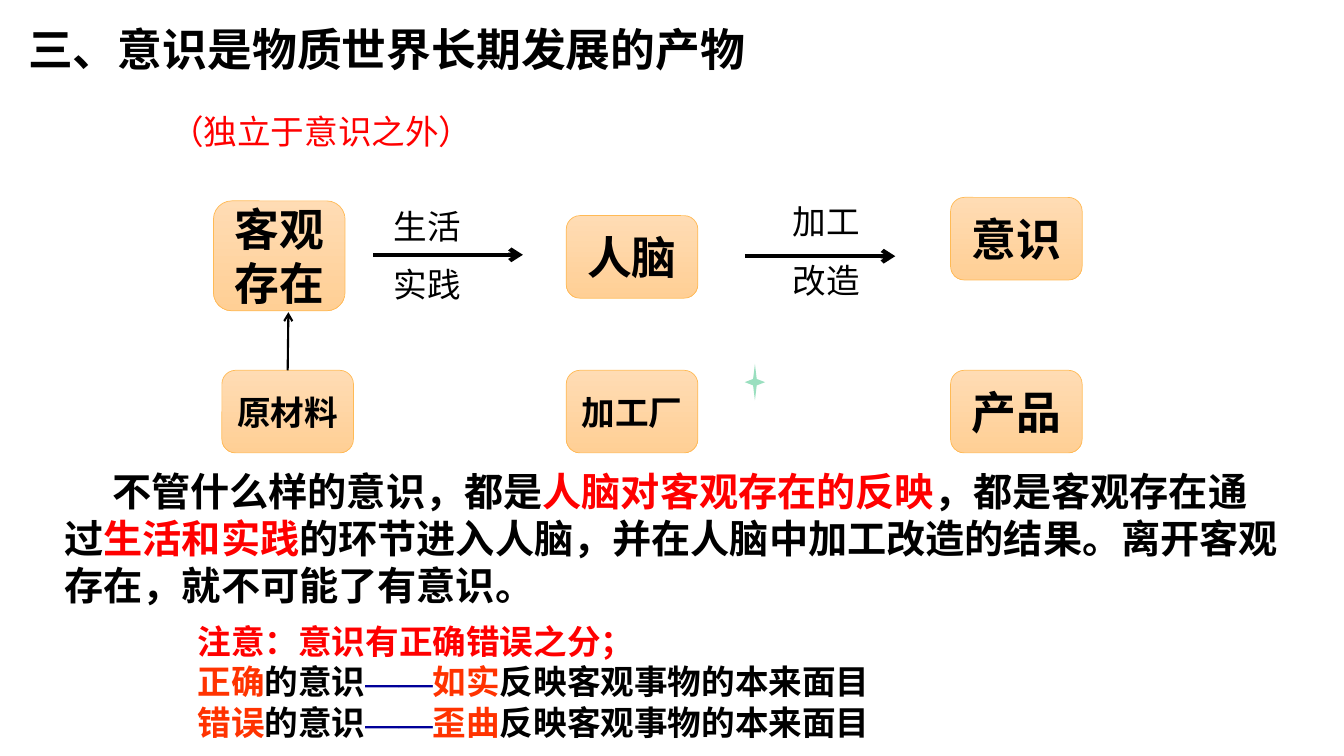
from dataclasses import dataclass

from lxml import etree
from pptx import Presentation
from pptx.dml.color import RGBColor
from pptx.enum import shapes, text
from pptx.oxml import ns
from pptx.util import Pt

SANS = "Noto Sans CJK SC"
SERIF = "Times New Roman"
HUES = {
    "black": "000000", "red": "FF0000", "orange": "FF3300", "navy": "000099",
    "mint": "9ADFBF", "edge": "FFBA55", "light": "FFDCB4", "deep": "FFCF95",
}


@dataclass
class Span:
    words: str
    hue: str = "black"
    font: str = SANS


@dataclass
class Box:
    words: str
    left: float
    top: float
    height: float = 59
    size: float = 32


@dataclass
class Note:
    left: float
    top: float
    width: float
    height: float
    size: float
    lines: list[list[Span]]
    bold: bool = True
    gap: float = 0
    indent: float = 0
    wrap: bool = True


@dataclass
class Arrow:
    start: tuple[float, float]
    end: tuple[float, float]
    weight: float
    source: str = ""


def paint(name: str) -> RGBColor:
    return RGBColor.from_string(HUES[name])


def add_run(para, span: Span, size: float, bold: bool) -> None:
    run = para.add_run()
    run.text = span.words
    font = run.font
    font.size, font.bold, font.name = Pt(size), bold, span.font
    font.color.rgb = paint(span.hue)
    east = etree.SubElement(run._r.get_or_add_rPr(), ns.qn("a:ea"))
    east.set("typeface", span.font)


def add_box(slide, box: Box):
    shape = slide.shapes.add_shape(
        shapes.MSO_SHAPE.ROUNDED_RECTANGLE,
        Pt(box.left), Pt(box.top), Pt(94), Pt(box.height))
    shape.shadow.inherit = False
    shape.fill.gradient()
    shape.fill.gradient_angle = 270
    for stop, hue in zip(shape.fill.gradient_stops, ("light", "deep")):
        stop.color.rgb = paint(hue)
    shape.line.color.rgb = paint("edge")
    shape.line.width = Pt(0.5)
    frame = shape.text_frame
    frame.word_wrap = True
    frame.vertical_anchor = text.MSO_ANCHOR.MIDDLE
    para = frame.paragraphs[0]
    para.alignment = text.PP_ALIGN.CENTER
    add_run(para, Span(box.words), box.size, True)
    return shape


def add_note(slide, note: Note) -> None:
    frame = slide.shapes.add_textbox(
        Pt(note.left), Pt(note.top), Pt(note.width), Pt(note.height)).text_frame
    frame.word_wrap = note.wrap
    for i, line in enumerate(note.lines):
        para = frame.add_paragraph() if i else frame.paragraphs[0]
        if i and note.gap:
            para.space_before = Pt(note.gap)
        if note.indent:
            para._p.get_or_add_pPr().set("indent", str(Pt(note.indent)))
        for span in line:
            add_run(para, span, note.size, note.bold)


def add_arrow(slide, arrow: Arrow, boxes: dict) -> None:
    line = slide.shapes.add_connector(
        shapes.MSO_CONNECTOR.STRAIGHT,
        *(Pt(v) for v in arrow.start + arrow.end))
    if arrow.source:
        line.begin_connect(boxes[arrow.source], 0)
    line.line.color.rgb = paint("black")
    line.line.width = Pt(arrow.weight)
    tip = etree.SubElement(line.line._get_or_add_ln(), ns.qn("a:tailEnd"))
    tip.set("type", "arrow")
    etree.SubElement(line._element.spPr, ns.qn("a:effectLst"))


def add_star(slide) -> None:
    star = slide.shapes.add_shape(
        shapes.MSO_SHAPE.STAR_4_POINT, Pt(532), Pt(260), Pt(14.5), Pt(26))
    star.shadow.inherit = False
    star.fill.solid()
    star.fill.fore_color.rgb = paint("mint")
    star.line.fill.background()


def contrast(kind: str, manner: str) -> list[Span]:
    """One line pairing a kind of consciousness with how it reflects things."""
    return [Span(kind, "orange"), Span("的意识"), Span("——", "navy", SERIF),
            Span(manner, "orange"), Span("反映客观事物的本来面目")]


BOXES = [
    Box("产品", 679, 264.5),
    Box("原材料", 158.5, 264.5, size=24),
    Box("加工厂", 404.5, 264.5, size=24),
    Box("意识", 679, 141),
    Box("人脑", 404.5, 154),
    Box("客观存在", 152.5, 143.5, 78.5),
]
ARROWS = [
    Arrow((266.5, 182), (373.5, 182), 3),
    Arrow((532, 183), (639.5, 183), 3),
    Arrow((205.5, 264.5), (206, 223), 1.5, "原材料"),
]
NOTES = [
    Note(13, 12, 552, 46, 32, [[Span("三、意识是物质世界长期发展的产物")]]),
    Note(114.5, 75.5, 243.5, 36, 24, [[Span("（独立于意识之外）", "red")]], bold=False),
    Note(274, 143.5, 117.5, 80, 24, [[Span("生活")], [Span("实践")]],
         bold=False, gap=13),
    Note(559, 140, 62.5, 80, 24, [[Span("加工")], [Span("改造")]],
         bold=False, gap=13, wrap=False),
    Note(39, 330.5, 882, 108.5, 28, [[
        Span("不管什么样的意识，都是"),
        Span("人脑对客观存在的反映", "red"),
        Span("，都是客观存在通过"),
        Span("生活和实践", "red"),
        Span("的环节进入人脑，并在人脑中加工改造的结果。"
             "离开客观存在，就不可能了有意识。"),
    ]], indent=34),
    Note(134, 440, 722, 96, 24, [
        [Span("注意：意识有正确错误之分；", "red")],
        contrast("正确", "如实"),
        contrast("错误", "歪曲"),
    ]),
]


def main() -> None:
    deck = Presentation()
    deck.slide_width, deck.slide_height = Pt(960), Pt(540)
    slide = deck.slides.add_slide(deck.slide_layouts[6])
    boxes = {box.words: add_box(slide, box) for box in BOXES}
    for arrow in ARROWS:
        add_arrow(slide, arrow, boxes)
    add_star(slide)
    for note in NOTES:
        add_note(slide, note)
    deck.save("out.pptx")


if __name__ == "__main__":
    main()
